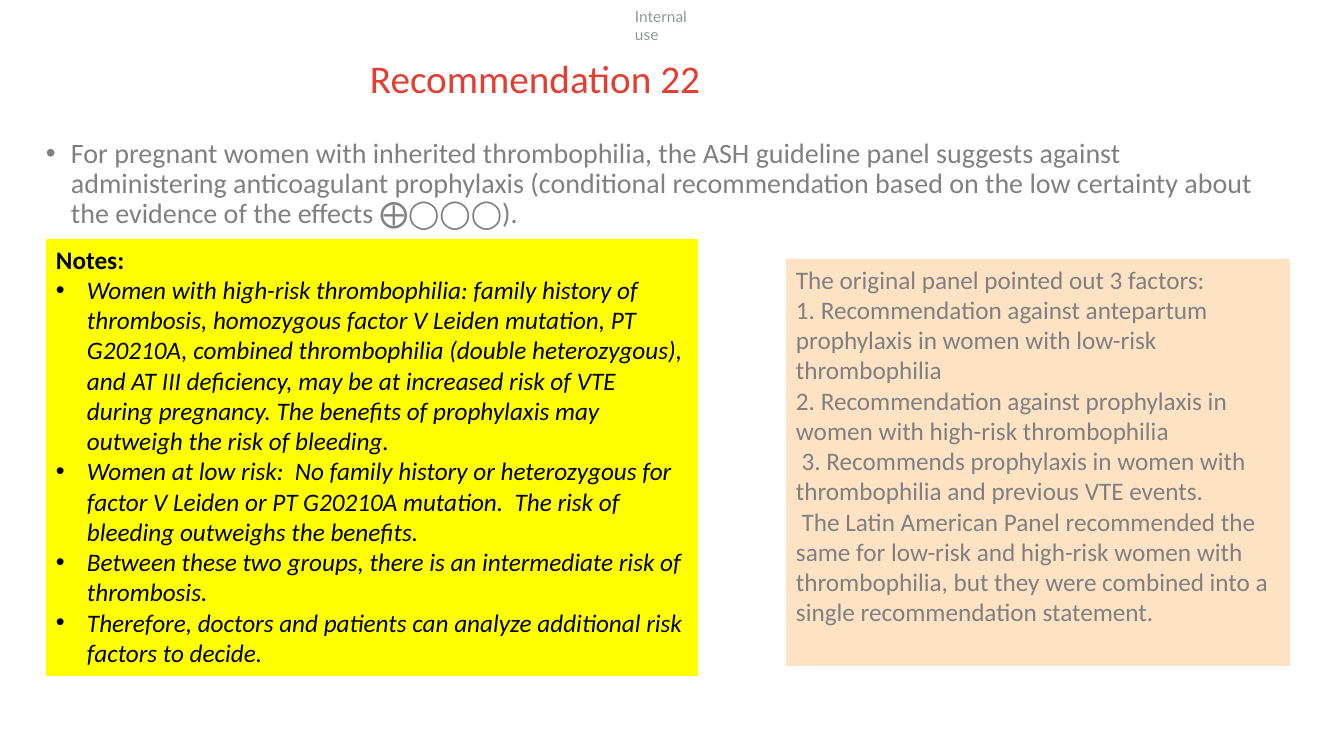
"""Build the Recommendation 22 slide on anticoagulant prophylaxis in pregnancy."""
from lxml.etree import SubElement
from pptx import Presentation
from pptx.dml.color import RGBColor
from pptx.enum.text import MSO_ANCHOR, PP_ALIGN
from pptx.oxml.ns import qn
from pptx.util import Pt

EMU_PER_PX = 914400 / 100.8
RED = RGBColor(0xE5, 0x3E, 0x31)
GRAY = RGBColor(0x80, 0x80, 0x80)
LABEL_GRAY = RGBColor(0x93, 0x97, 0x9B)
BLACK = RGBColor(0, 0, 0)
YELLOW = RGBColor(0xFF, 0xFF, 0)
PEACH = RGBColor(0xFE, 0xE2, 0xC4)


def px(length):
    return round(length * EMU_PER_PX)


def add_text(box, fill, margins, line_spacing, paragraphs):
    shape = slide.shapes.add_textbox(*[px(length) for length in box])
    if fill is not None:
        shape.fill.solid()
        shape.fill.fore_color.rgb = fill
    frame = shape.text_frame
    frame.word_wrap = True
    frame.vertical_anchor = MSO_ANCHOR.TOP
    horizontal, vertical = margins
    frame.margin_left = frame.margin_right = px(horizontal)
    frame.margin_top = frame.margin_bottom = px(vertical)
    for index, (text, indent, style) in enumerate(paragraphs):
        paragraph = frame.paragraphs[0] if index == 0 else frame.add_paragraph()
        paragraph.alignment = PP_ALIGN.LEFT
        paragraph.line_spacing = line_spacing
        if indent:
            properties = paragraph._p.get_or_add_pPr()
            properties.set("marL", str(px(indent)))
            properties.set("indent", str(-px(indent)))
            SubElement(properties, qn("a:buFont"), typeface="Arial")
            SubElement(properties, qn("a:buChar"), char="•")
        run = paragraph.add_run()
        run.text = text
        for name, value in style.items():
            if name == "color":
                run.font.color.rgb = value
            else:
                setattr(run.font, name, value)


presentation = Presentation()
presentation.slide_width = px(1344)
presentation.slide_height = px(756)
slide = presentation.slides.add_slide(presentation.slide_layouts[6])

label_style = {"name": "Lato", "size": Pt(11), "color": LABEL_GRAY}
title_style = {"name": "Calibri", "size": Pt(28), "color": RED}
body_style = {"name": "Calibri", "size": Pt(20), "color": GRAY}
panel_style = {"name": "Calibri", "size": Pt(18), "color": GRAY}
heading_style = {"name": "Calibri", "size": Pt(18), "color": BLACK, "bold": True}
note_style = {"name": "Calibri", "size": Pt(18), "color": BLACK, "italic": True}

notes = [
    "Women with high-risk thrombophilia: family history of thrombosis, homozygous factor V Leiden "
    "mutation, PT G20210A, combined thrombophilia (double heterozygous), and AT III deficiency, may be "
    "at increased risk of VTE during pregnancy. The benefits of prophylaxis may outweigh the risk of "
    "bleeding.",
    "Women at low risk:  No family history or heterozygous for factor V Leiden or PT G20210A mutation.  "
    "The risk of bleeding outweighs the benefits.",
    "Between these two groups, there is an intermediate risk of thrombosis.",
    "Therefore, doctors and patients can analyze additional risk factors to decide.",
]
panel_factors = [
    "The original panel pointed out 3 factors:",
    "1. Recommendation against antepartum prophylaxis in women with low-risk thrombophilia",
    "2. Recommendation against prophylaxis in women with high-risk thrombophilia",
    " 3. Recommends prophylaxis in women with thrombophilia and previous VTE events.",
    " The Latin American Panel recommended the same for low-risk and high-risk women with "
    "thrombophilia, but they were combined into a single recommendation statement.",
]
recommendation = (
    "For pregnant women with inherited thrombophilia, the ASH guideline panel suggests against "
    "administering anticoagulant prophylaxis (conditional recommendation based on the low certainty "
    "about the evidence of the effects ⨁◯◯◯)."
)

no_margins = (0, 0)
box_margins = (10, 5)
add_text((635, 7, 76, 18), None, no_margins, 1.0, [("Internal use", 0, label_style)])
add_text((46, 239, 652, 437), YELLOW, box_margins, 1.0,
         [("Notes:", 0, heading_style)] + [(note, 31, note_style) for note in notes])
add_text((786, 259, 504, 407), PEACH, box_margins, 1.0,
         [(factor, 0, panel_style) for factor in panel_factors])
add_text((370, 60, 598, 46), None, no_margins, 0.9, [("Recommendation 22", 0, title_style)])
add_text((46, 139, 1210, 120), None, no_margins, 0.9, [(recommendation, 25, body_style)])

presentation.save("out.pptx")
